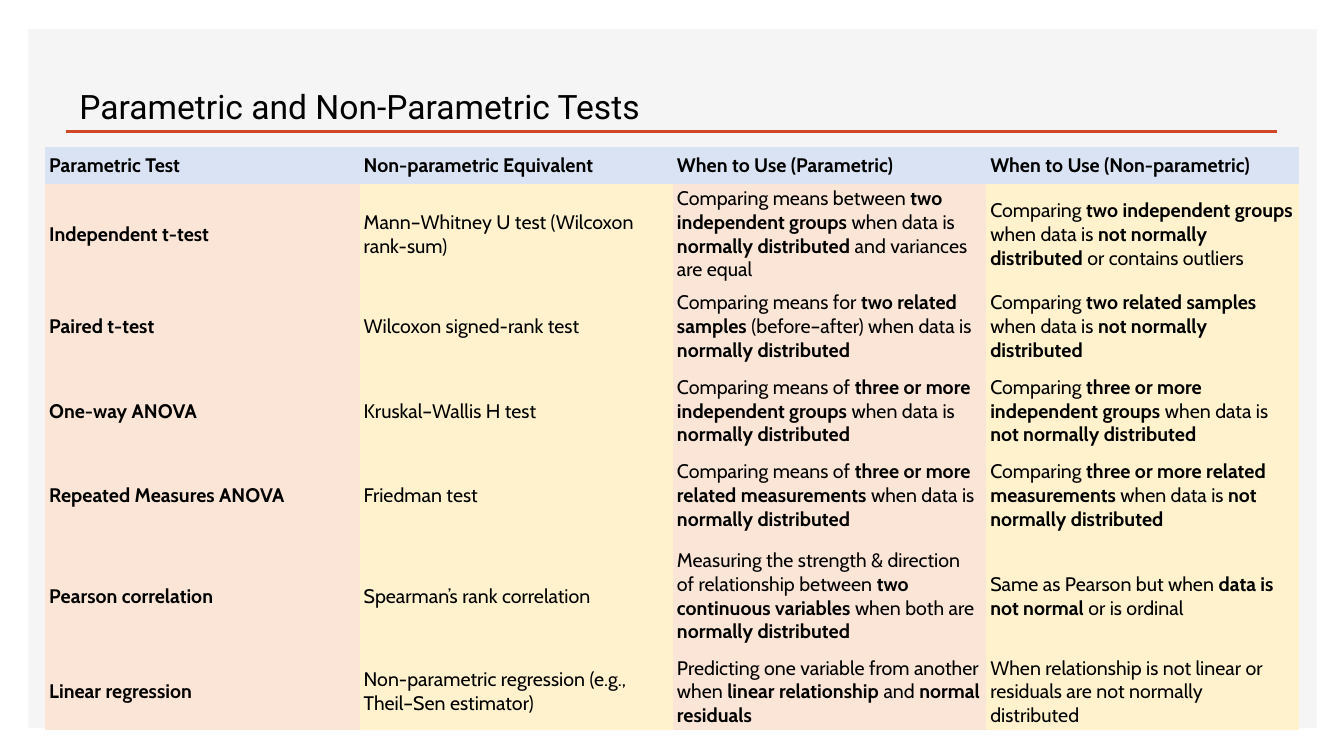
"""Build a slide comparing parametric and non-parametric tests."""
from dataclasses import dataclass

from lxml.etree import SubElement
from pptx import Presentation
from pptx.dml.color import RGBColor
from pptx.enum.shapes import MSO_CONNECTOR, MSO_SHAPE
from pptx.enum.text import MSO_ANCHOR, MSO_AUTO_SIZE
from pptx.oxml.ns import qn
from pptx.util import Pt


@dataclass(frozen=True)
class Theme:
    """Colours, fonts and type sizes of the slide."""

    panel: RGBColor = RGBColor.from_string("F5F5F5")
    accent: RGBColor = RGBColor.from_string("D24726")
    ink: RGBColor = RGBColor.from_string("000000")
    header: RGBColor = RGBColor.from_string("DAE3F3")
    parametric: RGBColor = RGBColor.from_string("FBE5D6")
    non_parametric: RGBColor = RGBColor.from_string("FFF2CC")
    title_font: str = "Roboto"
    table_font: str = "Cabin"
    title_size: int = 24
    table_size: int = 14


THEME = Theme()
BOLD_MARK = "*"
NO_GRID_STYLE = "{2D5ABB26-0587-4C30-8999-92F81FD0307C}"
COLUMN_WIDTHS = [224.6, 223.8, 223.8, 223.8]
ROW_HEIGHTS = [26.6, 71.3, 60.5, 60.5, 60.5, 82.8, 49]
TESTS = [
    ["*Parametric Test*", "*Non-parametric Equivalent*",
     "*When to Use (Parametric)*", "*When to Use (Non-parametric)*"],
    ["*Independent t-test*", "Mann–Whitney U test (Wilcoxon rank-sum)",
     "Comparing means between *two independent groups* when data is "
     "*normally distributed* and variances are equal",
     "Comparing *two independent groups* when data is "
     "*not normally distributed* or contains outliers"],
    ["*Paired t-test*", "Wilcoxon signed-rank test",
     "Comparing means for *two related samples* (before–after) when data is "
     "*normally distributed*",
     "Comparing *two related samples* when data is *not normally distributed*"],
    ["*One-way ANOVA*", "Kruskal–Wallis H test",
     "Comparing means of *three or more independent groups* when data is "
     "*normally distributed*",
     "Comparing *three or more independent groups* when data is "
     "*not normally distributed*"],
    ["*Repeated Measures ANOVA*", "Friedman test",
     "Comparing means of *three or more related measurements* when data is "
     "*normally distributed*",
     "Comparing *three or more related measurements* when data is "
     "*not normally distributed*"],
    ["*Pearson correlation*", "Spearman’s rank correlation",
     "Measuring the strength & direction of relationship between "
     "*two continuous variables* when both are *normally distributed*",
     "Same as Pearson but when *data is not normal* or is ordinal"],
    ["*Linear regression*",
     "Non-parametric regression (e.g., Theil–Sen estimator)",
     "Predicting one variable from another when *linear relationship* and "
     "*normal residuals*",
     "When relationship is not linear or residuals are not normally distributed"],
]


def add_runs(paragraph, marked_text, font_name, size):
    """Add text run by run, with the marked parts in bold."""
    for index, part in enumerate(marked_text.split(BOLD_MARK)):
        if part:
            run = paragraph.add_run()
            run.text = part
            run.font.name = font_name
            run.font.size = Pt(size)
            run.font.bold = index % 2 == 1
            run.font.color.rgb = THEME.ink


def add_panel(slide, left, top, width, height):
    """Add the grey panel behind the content."""
    panel = slide.shapes.add_shape(
        MSO_SHAPE.RECTANGLE, Pt(left), Pt(top), Pt(width), Pt(height))
    panel.shadow.inherit = False
    panel.fill.solid()
    panel.fill.fore_color.rgb = THEME.panel
    panel.line.fill.background()


def add_rule(slide, left, right, y):
    """Add the horizontal rule under the title."""
    rule = slide.shapes.add_connector(
        MSO_CONNECTOR.STRAIGHT, Pt(left), Pt(y), Pt(right), Pt(y))
    rule.line.color.rgb = THEME.accent
    rule.line.width = Pt(2)
    SubElement(rule._element.spPr, qn("a:effectLst"))


def add_title(slide, text, left, top, width, height):
    """Add the slide title."""
    title = slide.shapes.add_textbox(Pt(left), Pt(top), Pt(width), Pt(height))
    frame = title.text_frame
    frame.word_wrap = True
    frame.auto_size = MSO_AUTO_SIZE.SHAPE_TO_FIT_TEXT
    add_runs(frame.paragraphs[0], text, THEME.title_font, THEME.title_size)


def fill_cell(cell, marked_text, colour):
    """Set the text, margins and fill of one table cell."""
    cell.fill.solid()
    cell.fill.fore_color.rgb = colour
    cell.vertical_anchor = MSO_ANCHOR.MIDDLE
    cell.margin_left = cell.margin_right = Pt(3)
    cell.margin_top = cell.margin_bottom = Pt(1.5)
    add_runs(cell.text_frame.paragraphs[0], marked_text,
             THEME.table_font, THEME.table_size)


def add_tests_table(slide, left, top):
    """Add the table of tests, coloured by alternating columns."""
    table = slide.shapes.add_table(
        len(ROW_HEIGHTS), len(COLUMN_WIDTHS), Pt(left), Pt(top),
        Pt(sum(COLUMN_WIDTHS)), Pt(sum(ROW_HEIGHTS))).table
    table.first_row = table.horz_banding = False
    table._tbl.tblPr.find(qn("a:tableStyleId")).text = NO_GRID_STYLE
    for column, width in zip(table.columns, COLUMN_WIDTHS):
        column.width = Pt(width)
    for row, height in zip(table.rows, ROW_HEIGHTS):
        row.height = Pt(height)
    column_colours = [THEME.parametric, THEME.non_parametric]
    for row_index, test in enumerate(TESTS):
        for column_index, marked_text in enumerate(test):
            colour = column_colours[column_index % 2] if row_index else THEME.header
            fill_cell(table.cell(row_index, column_index), marked_text, colour)


def main():
    """Build and save the slide."""
    deck = Presentation()
    deck.slide_width, deck.slide_height = Pt(960), Pt(540)
    slide = deck.slides.add_slide(deck.slide_layouts[6])
    add_panel(slide, 20.2, 20.9, 920.2, 499)
    add_rule(slide, 47.5, 912.2, 94)
    add_tests_table(slide, 32.2, 105)
    add_title(slide, "Parametric and Non-Parametric Tests", 49.7, 57.6, 479.5, 36)
    deck.save("out.pptx")


if __name__ == "__main__":
    main()
